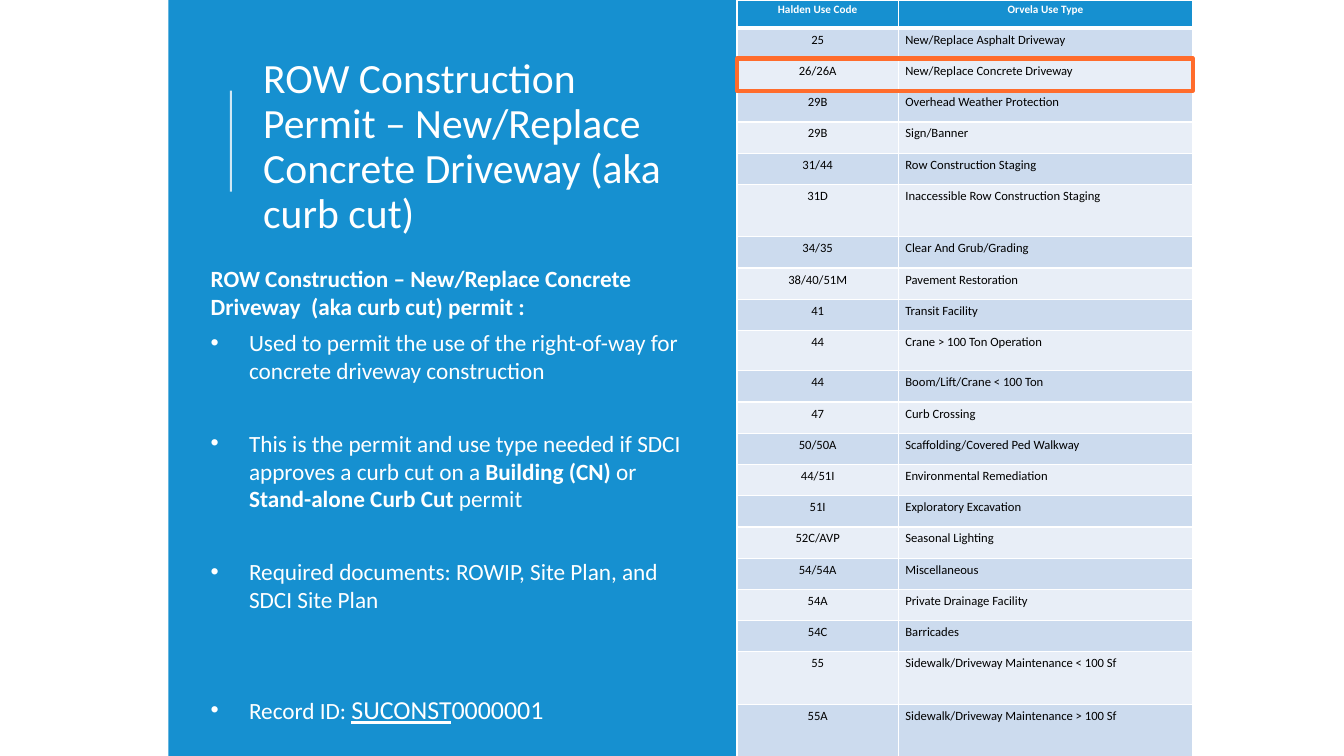
from dataclasses import dataclass

from lxml.etree import SubElement
from pptx import Presentation
from pptx.dml.color import RGBColor
from pptx.enum.shapes import MSO_CONNECTOR as Connector, MSO_SHAPE as Preset
from pptx.enum.text import MSO_ANCHOR as Anchor, MSO_AUTO_SIZE as AutoSize, PP_ALIGN as Align
from pptx.oxml.ns import qn
from pptx.util import Inches, Pt


@dataclass(frozen=True)
class Theme:
    """Colours, type sizes and font of the slide."""
    font: str = "Calibri"
    blue: str = "1690D0"
    white: str = "FFFFFF"
    black: str = "000000"
    orange: str = "FF6C2C"
    bands: tuple = ("CCDBEE", "E8EEF7")
    title: float = 29.7
    body: float = 16.6
    record: float = 18.5
    header: float = 8
    cell: float = 9


THEME = Theme()

TITLE = "ROW Construction Permit – New/Replace Concrete Driveway (aka curb cut)"
HEADING = "ROW Construction – New/Replace Concrete Driveway  (aka curb cut) permit :"
BOLD = {"bold": True}
BULLETS = [
    (6, [("Used to permit the use of the right-of-way for concrete driveway construction", {})]),
    (32, [("This is the permit and use type needed if SDCI approves a curb cut on a ", {}),
          ("Building (CN)", BOLD), (" or ", {}), ("Stand-alone Curb Cut ", BOLD), ("permit", {})]),
    (32, [("Required documents: ROWIP, Site Plan, and SDCI Site Plan", {})]),
    (57.6, [("Record ID: ", {}),
            ("SUCONST", {"size": THEME.record, "underline": True}),
            ("0000001", {"size": THEME.record})]),
]

HEADERS = ("Halden Use Code", "Orvela Use Type")
USE_TYPES = [
    ("25", "New/Replace Asphalt Driveway"),
    ("26/26A", "New/Replace Concrete Driveway"),
    ("29B", "Overhead Weather Protection"),
    ("29B", "Sign/Banner"),
    ("31/44", "Row Construction Staging"),
    ("31D", "Inaccessible Row Construction Staging"),
    ("34/35", "Clear And Grub/Grading"),
    ("38/40/51M", "Pavement Restoration"),
    ("41", "Transit Facility"),
    ("44", "Crane > 100 Ton Operation"),
    ("44", "Boom/Lift/Crane < 100 Ton"),
    ("47", "Curb Crossing"),
    ("50/50A", "Scaffolding/Covered Ped Walkway"),
    ("44/51I", "Environmental Remediation"),
    ("51I", "Exploratory Excavation"),
    ("52C/AVP", "Seasonal Lighting"),
    ("54/54A", "Miscellaneous"),
    ("54A", "Private Drainage Facility"),
    ("54C", "Barricades"),
    ("55", "Sidewalk/Driveway Maintenance < 100 Sf"),
    ("55A", "Sidewalk/Driveway Maintenance > 100 Sf"),
]
COLUMN_WIDTHS = (1.6, 2.92)
HEADER_HEIGHT, ROW_HEIGHT = 0.28, 0.31
TALL_ROWS = {6: 0.52, 10: 0.4, 20: 0.52, 21: 0.52}
TABLE_LEFT = 7.31


def color(value):
    """Turn a hex string into a colour."""
    return RGBColor.from_string(value)


def add_run(paragraph, text, size, fill=THEME.white, bold=False, underline=False):
    """Append one formatted run."""
    run = paragraph.add_run()
    run.text = text
    font = run.font
    font.name, font.size = THEME.font, Pt(size)
    font.bold, font.underline = bold, underline
    font.color.rgb = color(fill)


def place(shape, left, top, width, height):
    """Set the position and size of a shape."""
    shape.left, shape.top = Inches(left), Inches(top)
    shape.width, shape.height = Inches(width), Inches(height)


def set_bullet(paragraph, character=None, indent=0):
    """Give a paragraph a hanging bullet, or none."""
    properties = paragraph._p.get_or_add_pPr()
    properties.set("marL", str(Inches(indent)))
    properties.set("indent", str(-Inches(indent)))
    if character:
        SubElement(properties, qn("a:buFont"), typeface="Arial")
        SubElement(properties, qn("a:buChar"), char=character)
    else:
        SubElement(properties, qn("a:buNone"))


def add_rectangle(slide, left, top, width, height, fill=None, line=None):
    """Add a rectangle with an optional fill and outline."""
    shape = slide.shapes.add_shape(
        Preset.RECTANGLE, Inches(left), Inches(top), Inches(width), Inches(height))
    shape.shadow.inherit = False
    if fill:
        shape.fill.solid()
        shape.fill.fore_color.rgb = color(fill)
    else:
        shape.fill.background()
    if line:
        shape.line.color.rgb = color(line)
        shape.line.width = Pt(3)
    else:
        shape.line.fill.background()
    return shape


def add_panel(slide):
    """Lay the blue panel behind the placeholders."""
    panel = add_rectangle(slide, 1.67, 0, 5.65, 7.5, fill=THEME.blue)
    panel.element.getparent().insert(2, panel.element)


def add_accent_line(slide):
    """Draw the translucent rule beside the title."""
    rule = slide.shapes.add_connector(
        Connector.STRAIGHT, Inches(2.29), Inches(1.9), Inches(2.29), Inches(0.9))
    rule.line.color.rgb = color(THEME.white)
    rule.line.width = Pt(1.5)
    tint = next(rule.element.iter(qn("a:srgbClr")))
    SubElement(tint, qn("a:alpha"), val="80000")
    SubElement(rule.element.spPr, qn("a:effectLst"))


def fill_title(shape):
    """Format the title placeholder."""
    place(shape, 2.51, 0.64, 4.15, 1.64)
    frame = shape.text_frame
    frame.auto_size, frame.word_wrap = AutoSize.NONE, True
    frame.vertical_anchor = Anchor.MIDDLE
    paragraph = frame.paragraphs[0]
    paragraph.alignment, paragraph.line_spacing = Align.LEFT, 0.9
    add_run(paragraph, TITLE, THEME.title)


def fill_body(shape):
    """Write the heading and the bullet list."""
    place(shape, 1.99, 2.57, 5, 4.58)
    frame = shape.text_frame
    frame.auto_size, frame.word_wrap = AutoSize.NONE, True
    frame.vertical_anchor = Anchor.TOP
    heading = frame.paragraphs[0]
    heading.space_before = Pt(6)
    set_bullet(heading)
    add_run(heading, HEADING, THEME.body, bold=True)
    for gap, runs in BULLETS:
        paragraph = frame.add_paragraph()
        paragraph.space_before = Pt(gap)
        set_bullet(paragraph, "•", 0.38)
        for text, style in runs:
            add_run(paragraph, text, **{"size": THEME.body, **style})


def set_borders(cell, widths):
    """Draw white borders, widths given by side in points."""
    for side, width in widths.items():
        line = SubElement(cell._tc.get_or_add_tcPr(), qn(f"a:ln{side}"), w=str(Pt(width)))
        SubElement(SubElement(line, qn("a:solidFill")), qn("a:srgbClr"), val=THEME.white)


def fill_cell(cell, text, row, column):
    """Write and format one table cell."""
    is_header = row == 0
    set_borders(cell, {"L": 1, "R": 1, "T": 3 if row == 1 else 1, "B": 3 if is_header else 1})
    cell.fill.solid()
    cell.fill.fore_color.rgb = color(THEME.blue if is_header else THEME.bands[(row - 1) % 2])
    cell.margin_left = cell.margin_right = Inches(0.07)
    cell.margin_top = cell.margin_bottom = Inches(0.03)
    paragraph = cell.text_frame.paragraphs[0]
    paragraph.alignment = Align.CENTER if is_header or column == 0 else Align.LEFT
    if is_header:
        add_run(paragraph, text, THEME.header, bold=True)
    else:
        paragraph.line_spacing = 1.07
        add_run(paragraph, text, THEME.cell, THEME.black)


def add_use_table(slide):
    """Add the table of use codes and types."""
    rows = [HEADERS, *USE_TYPES]
    table = slide.shapes.add_table(
        len(rows), len(HEADERS), Inches(TABLE_LEFT), 0,
        Inches(sum(COLUMN_WIDTHS)), Inches(7.5)).table
    for column, width in zip(table.columns, COLUMN_WIDTHS):
        column.width = Inches(width)
    for row, texts in enumerate(rows):
        height = TALL_ROWS.get(row, ROW_HEIGHT) if row else HEADER_HEIGHT
        table.rows[row].height = Inches(height)
        for column, text in enumerate(texts):
            fill_cell(table.cell(row, column), text, row, column)


def main():
    """Build the slide and save it."""
    presentation = Presentation()
    presentation.slide_width, presentation.slide_height = Inches(13.33), Inches(7.5)
    slide = presentation.slides.add_slide(presentation.slide_layouts[1])
    add_panel(slide)
    fill_title(slide.shapes.title)
    add_accent_line(slide)
    fill_body(slide.placeholders[1])
    add_use_table(slide)
    add_rectangle(slide, TABLE_LEFT, 0.58, sum(COLUMN_WIDTHS), 0.32, line=THEME.orange)
    presentation.save("out.pptx")


if __name__ == "__main__":
    main()
